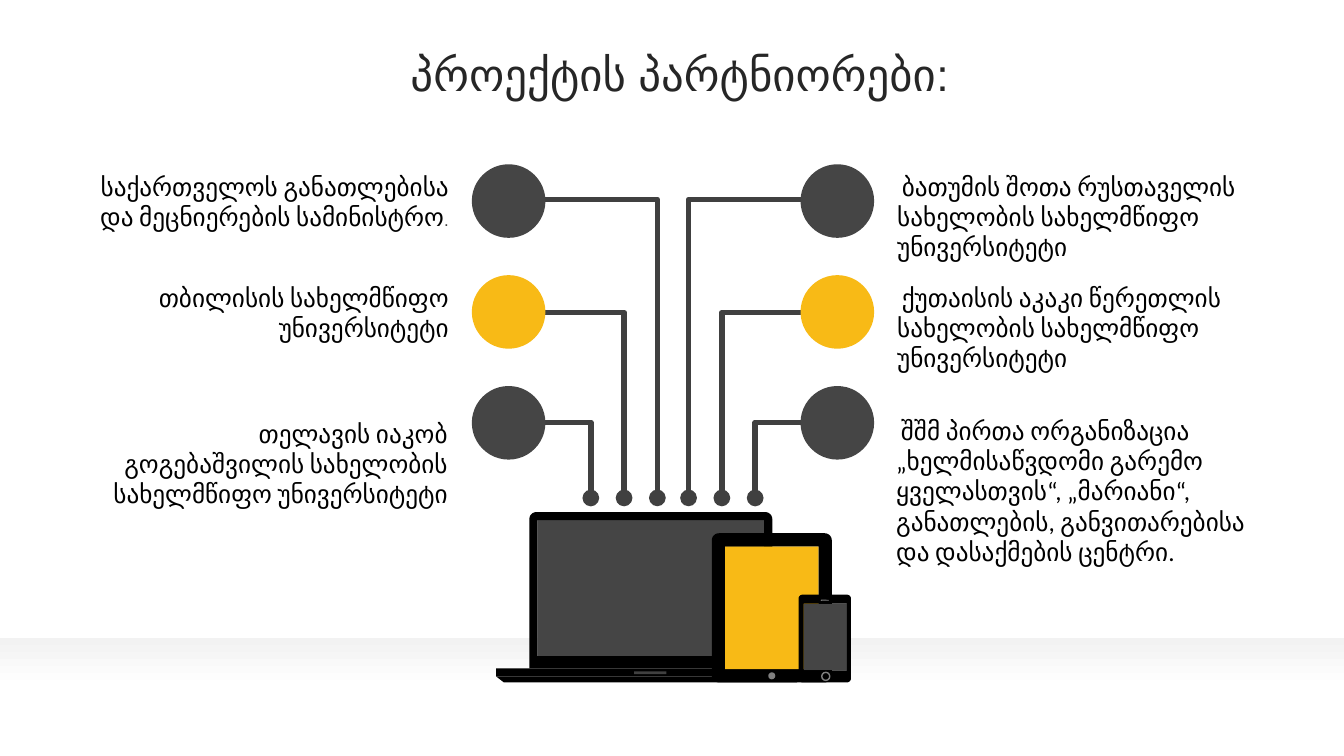
"""Build the slide that lists the project partners around a set of devices."""
from dataclasses import dataclass
from math import cos, pi, sin

from lxml import etree
from pptx import Presentation
from pptx.dml.color import RGBColor
from pptx.enum.shapes import MSO_CONNECTOR, MSO_SHAPE
from pptx.enum.text import MSO_ANCHOR, MSO_AUTO_SIZE, PP_ALIGN
from pptx.oxml.ns import qn
from pptx.shapes.autoshape import Shape
from pptx.slide import Slide
from pptx.util import Inches, Pt

ELBOW = MSO_CONNECTOR.ELBOW
RECTANGLE, OVAL = MSO_SHAPE.RECTANGLE, MSO_SHAPE.OVAL
TRAPEZOID, ROUNDED = MSO_SHAPE.TRAPEZOID, MSO_SHAPE.ROUNDED_RECTANGLE
MIDDLE, FIT_SHAPE = MSO_ANCHOR.MIDDLE, MSO_AUTO_SIZE.SHAPE_TO_FIT_TEXT
LEFT, CENTER, RIGHT = PP_ALIGN.LEFT, PP_ALIGN.CENTER, PP_ALIGN.RIGHT

Point = tuple[float, float]


@dataclass(frozen=True)
class Box:
    left: float
    top: float
    width: float
    height: float


@dataclass(frozen=True)
class Theme:
    title: str = "262626"
    text: str = "000000"
    line: str = "404040"
    dark: str = "454545"
    accent: str = "F8BA16"
    frame: str = "000000"
    button: str = "808080"
    band_start: str = "F2F2F2"
    band_end: str = "FFFFFF"
    title_font: str = "Arial"
    body_font: str = "Calibri"
    title_size: int = 32
    body_size: int = 18
    small_size: int = 12
    wire_width: int = 4


@dataclass(frozen=True)
class Partner:
    name: str
    row: int
    text_box: Box
    ending: str = ""


@dataclass(frozen=True)
class Side:
    disc_left: float
    wire_start: float
    inner_dock: float
    dock_step: float
    alignment: PP_ALIGN
    partners: tuple[Partner, ...]


@dataclass(frozen=True)
class Device:
    frame: Box
    screen: Box
    top_radius: float
    bottom_radius: float
    color: str


THEME = Theme()
DISC_SIZE, DISC_TOP, ROW_STEP = 0.73, 1.63, 1.1
WIRE_LEVELS = (1.98, 3.1, 4.19)
DOCK_LEVEL = 4.94

SIDES = (
    Side(4.68, 5.28, 6.52, -0.33, RIGHT, (
        Partner("საქართველოს განათლებისა და მეცნიერების სამინისტრო", 0,
                Box(0.69, 1.65, 3.86, 0.71), "."),
        Partner("თბილისის სახელმწიფო უნივერსიტეტი", 1, Box(0.69, 2.75, 3.86, 0.71)),
        Partner("თელავის იაკობ გოგებაშვილის სახელობის სახელმწიფო უნივერსიტეტი", 2,
                Box(0.68, 4.1, 3.86, 1.01)),
    )),
    Side(7.94, 8.07, 6.83, 0.33, LEFT, (
        Partner("ბათუმის შოთა რუსთაველის სახელობის სახელმწიფო უნივერსიტეტი", 0,
                Box(8.8, 1.65, 3.87, 1.01)),
        Partner("ქუთაისის აკაკი წერეთლის სახელობის სახელმწიფო უნივერსიტეტი", 1,
                Box(8.8, 2.75, 3.87, 1.01)),
        Partner("შშმ პირთა ორგანიზაცია „ხელმისაწვდომი გარემო ყველასთვის“, „მარიანი“, "
                "განათლების, განვითარებისა და დასაქმების ცენტრი.", 2,
                Box(8.79, 4.07, 3.87, 1.62)),
    )),
)
LAPTOP = Device(Box(5.25, 5.08, 2.41, 1.55), Box(5.33, 5.16, 2.25, 1.35), 0.07, 0, THEME.dark)
TABLET = Device(Box(7.06, 5.29, 1.19, 1.48), Box(7.19, 5.42, 0.93, 1.22), 0.07, 0.07, THEME.accent)
PHONE = Device(Box(7.92, 5.9, 0.52, 0.87), Box(7.97, 5.99, 0.43, 0.66), 0.04, 0.04, THEME.dark)


def lengths(box: Box) -> tuple[int, ...]:
    return tuple(Inches(value) for value in (box.left, box.top, box.width, box.height))


def paint(shape: Shape, color: str) -> None:
    shape.shadow.inherit = False
    shape.fill.solid()
    shape.fill.fore_color.rgb = RGBColor.from_string(color)
    shape.line.fill.background()


def add_filled(slide: Slide, kind: MSO_SHAPE, box: Box, color: str) -> Shape:
    shape = slide.shapes.add_shape(kind, *lengths(box))
    paint(shape, color)
    return shape


def add_band(slide: Slide) -> None:
    band = add_filled(slide, RECTANGLE, Box(0, 6.33, 13.33, 1.17), THEME.band_end)
    band.fill.gradient()
    band.fill.gradient_angle = 270
    stops = ((0, THEME.band_start), (0.42, THEME.band_end))
    for stop, (position, color) in zip(band.fill.gradient_stops, stops):
        stop.position = position
        stop.color.rgb = RGBColor.from_string(color)


def outline(box: Box, top_radius: float, bottom_radius: float) -> list[Point]:
    right, bottom = box.left + box.width, box.top + box.height
    corners = (
        (box.left + top_radius, box.top + top_radius, top_radius, 180),
        (right - top_radius, box.top + top_radius, top_radius, 270),
        (right - bottom_radius, bottom - bottom_radius, bottom_radius, 0),
        (box.left + bottom_radius, bottom - bottom_radius, bottom_radius, 90),
    )
    return [(x + radius * cos(angle * pi / 180), y + radius * sin(angle * pi / 180))
            for x, y, radius, start in corners
            for angle in range(start, start + 91, 15 if radius else 91)]


def add_device(slide: Slide, device: Device) -> None:
    add_filled(slide, RECTANGLE, device.screen, device.color)
    outer = outline(device.frame, device.top_radius, device.bottom_radius)
    hole = outline(device.screen, 0, 0)[::-1]
    outer, hole = ([(Inches(x), Inches(y)) for x, y in points] for points in (outer, hole))
    builder = slide.shapes.build_freeform(*outer[0])
    builder.add_line_segments(outer[1:], close=True)
    builder.move_to(*hole[0])
    builder.add_line_segments(hole[1:], close=True)
    paint(builder.convert_to_shape(), THEME.frame)


def add_devices(slide: Slide) -> None:
    add_device(slide, LAPTOP)
    add_filled(slide, RECTANGLE, Box(4.92, 6.63, 3.06, 0.08), THEME.frame)
    base = add_filled(slide, TRAPEZOID, Box(4.92, 6.71, 3.06, 0.06), THEME.frame)
    base.rotation = 180
    base.adjustments[0] = 1.3
    add_filled(slide, RECTANGLE, Box(6.29, 6.66, 0.32, 0.03), THEME.line)
    add_device(slide, TABLET)
    add_filled(slide, OVAL, Box(7.62, 6.67, 0.07, 0.07), THEME.button)
    add_device(slide, PHONE)
    speaker = add_filled(slide, ROUNDED, Box(8.14, 5.95, 0.08, 0.01), THEME.button)
    speaker.adjustments[0] = 0.5
    ring = add_filled(slide, OVAL, Box(8.15, 6.67, 0.08, 0.08), THEME.frame)
    ring.fill.background()
    ring.line.color.rgb = RGBColor.from_string(THEME.button)
    ring.line.width = Pt(1)


def add_wire(slide: Slide, start: Point, end: Point) -> None:
    wire = slide.shapes.add_connector(ELBOW, *(Inches(value) for value in start + end))
    wire.line.color.rgb = RGBColor.from_string(THEME.line)
    wire.line.width = Pt(THEME.wire_width)
    properties = wire._element.spPr
    properties.find(qn("a:prstGeom")).set("prst", "bentConnector2")
    for tag in ("a:headEnd", "a:tailEnd"):
        etree.SubElement(properties.find(qn("a:ln")), qn(tag), type="oval")
    etree.SubElement(properties, qn("a:effectLst"))


def add_partner(slide: Slide, side: Side, partner: Partner) -> None:
    disc = Box(side.disc_left, DISC_TOP + partner.row * ROW_STEP, DISC_SIZE, DISC_SIZE)
    dock = side.inner_dock + partner.row * side.dock_step
    add_wire(slide, (side.wire_start, WIRE_LEVELS[partner.row]), (dock, DOCK_LEVEL))
    add_filled(slide, OVAL, disc, THEME.accent if partner.row == 1 else THEME.dark)
    text_frame = slide.shapes.add_textbox(*lengths(partner.text_box)).text_frame
    text_frame.word_wrap = True
    text_frame.auto_size = FIT_SHAPE
    paragraph = text_frame.paragraphs[0]
    paragraph.alignment = side.alignment
    small = (THEME.small_size, THEME.title_font, THEME.line)
    body = (THEME.body_size, THEME.body_font, THEME.text)
    for text, (size, font, color) in ((" ", small), (partner.name, body), (partner.ending, small)):
        if text:
            run = paragraph.add_run()
            run.text = text
            run.font.size, run.font.name = Pt(size), font
            run.font.color.rgb = RGBColor.from_string(color)


def add_title(slide: Slide) -> None:
    title = slide.shapes.title
    title.left, title.top, title.width, title.height = lengths(Box(0.35, 0.37, 12.66, 0.79))
    title.text_frame.text = " პროექტის პარტნიორები:"
    title.text_frame.vertical_anchor = MIDDLE
    paragraph = title.text_frame.paragraphs[0]
    paragraph.alignment = CENTER
    paragraph.line_spacing = 0.9
    font = paragraph.runs[0].font
    font.size, font.name = Pt(THEME.title_size), THEME.title_font
    font.color.rgb = RGBColor.from_string(THEME.title)


def main() -> None:
    presentation = Presentation()
    presentation.slide_width, presentation.slide_height = Inches(13.33), Inches(7.5)
    slide = presentation.slides.add_slide(presentation.slide_layouts[5])
    add_title(slide)
    add_band(slide)
    add_devices(slide)
    for side in SIDES:
        for partner in side.partners:
            add_partner(slide, side, partner)
    presentation.save("out.pptx")


if __name__ == "__main__":
    main()
